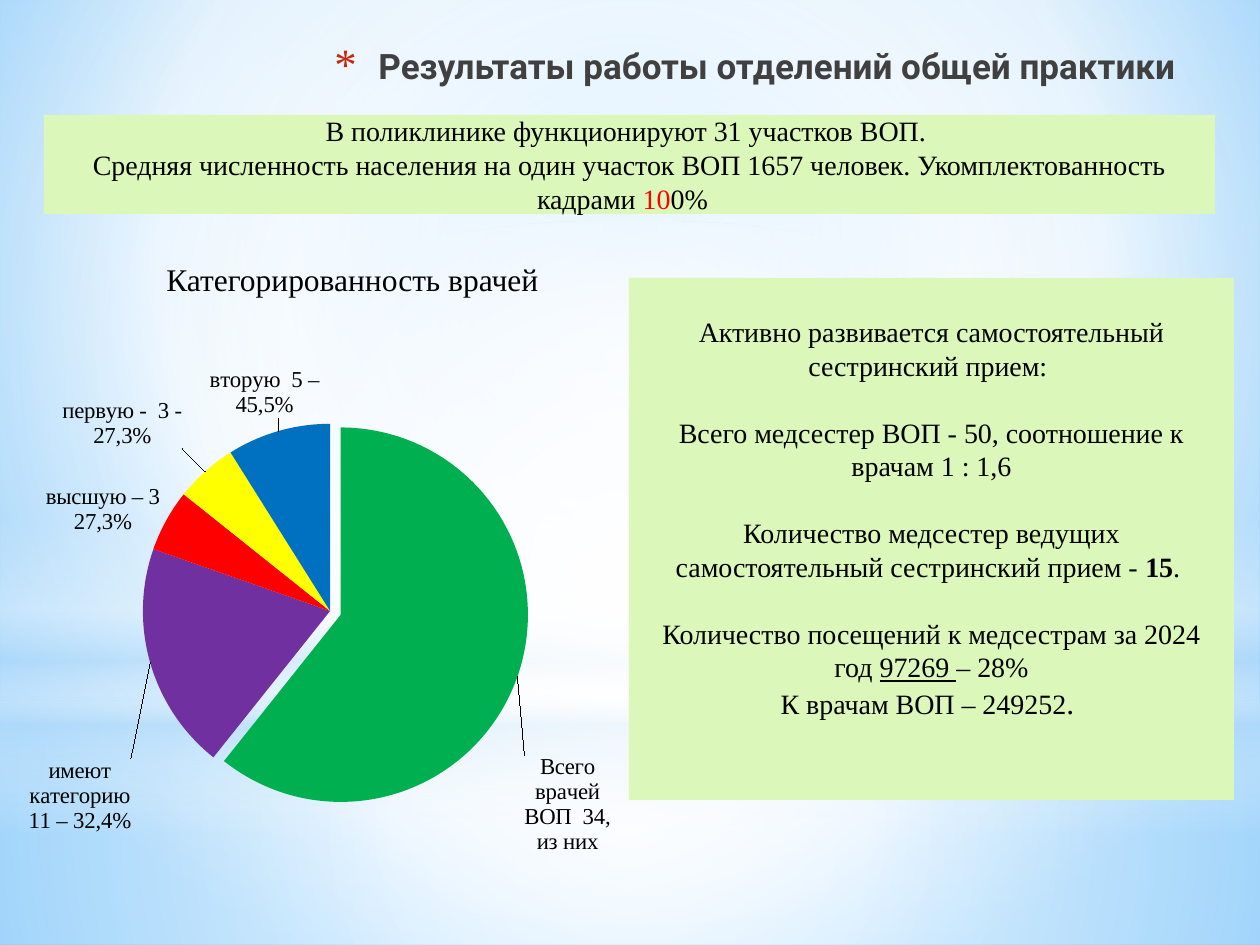
import pptx
import pptx.util
import pptx.dml.color
import pptx.chart.data
import pptx.enum.chart
import pptx.enum.shapes
import pptx.enum.text
import pptx.oxml
import pptx.oxml.ns

PX = 914400 / 126
SERIF = "Times New Roman"
COLORS = {
    "black": "000000", "title": "404040", "bullet": "C3260C", "box": "DCF7BA",
    "sky": "9ED5FF", "deep": "5BB9FF", "haze": "B4DCFA", "white": "FFFFFF",
    "green": "00B050", "purple": "7030A0", "red": "FF0000", "yellow": "FFFF00", "blue": "0070C0",
}
RGB = {name: pptx.dml.color.RGBColor.from_string(value) for name, value in COLORS.items()}
ALIGN = pptx.enum.text.PP_ALIGN
ANCHOR = pptx.enum.text.MSO_ANCHOR
SHAPE = pptx.enum.shapes.MSO_SHAPE
NS = pptx.oxml.ns.nsdecls("a", "c")


def gradient(stops, center=None):
    stop_xml = "".join(
        f'<a:gs pos="{place * 1000}"><a:srgbClr val="{COLORS[color]}">'
        f'<a:alpha val="{alpha * 1000}"/></a:srgbClr></a:gs>'
        for place, color, alpha in stops)
    if center:
        left, top, right, bottom = [side * 1000 for side in center]
        direction = (f'<a:path path="circle"><a:fillToRect l="{left}" t="{top}" '
                     f'r="{right}" b="{bottom}"/></a:path>')
    else:
        direction = '<a:lin ang="5400000" scaled="0"/>'
    return pptx.oxml.parse_xml(
        f'<a:gradFill {NS} rotWithShape="1"><a:gsLst>{stop_xml}</a:gsLst>{direction}</a:gradFill>')


def add_runs(paragraph, runs, **base):
    for text, changes in runs:
        run = paragraph.add_run()
        run.text = text
        values = {"name": SERIF, "size": 16, "color": "black", **base, **changes}
        run.font.color.rgb = RGB[values.pop("color")]
        values["size"] = pptx.util.Pt(values["size"])
        for name, value in values.items():
            setattr(run.font, name, value)


presentation = pptx.Presentation()
presentation.slide_width = pptx.util.Inches(10)
presentation.slide_height = pptx.util.Inches(7.5)
slide = presentation.slides.add_slide(presentation.slide_layouts[5])

slide.background.fill.solid()
background = slide.background.fill._xPr
background.replace(
    background.find(pptx.oxml.ns.qn("a:solidFill")),
    gradient([(0, "sky", 100), (60, "white", 100), (100, "deep", 100)], (20, 10, 20, 60)))

middle = (50, 50, 50, 50)
backdrops = [
    (SHAPE.RECTANGLE, 703, 242, [(0, "white", 91), (37, "white", 76), (100, "haze", 79)], middle),
    (SHAPE.RECTANGLE, 0, 703, [(0, "white", 89), (48, "white", 62), (100, "haze", 79)], middle),
    (SHAPE.RECTANGLE, 519, 315, [(0, "white", 0), (29, "white", 30), (45, "haze", 40),
                                 (55, "white", 26), (65, "haze", 60), (100, "white", 0)], None),
    (SHAPE.OVAL, 221, 703, [(0, "white", 100), (56, "white", 0)], middle),
]
for index, (kind, top, height, stops, center) in enumerate(backdrops):
    shape = slide.shapes.add_shape(kind, 0, round(top * PX), round(1260 * PX), round(height * PX))
    shape.shadow.inherit = False
    shape.line.fill.background()
    shape.fill.solid()
    properties = shape.element.spPr
    properties.replace(properties.find(pptx.oxml.ns.qn("a:solidFill")), gradient(stops, center))
    slide.shapes.element.insert(2 + index, shape.element)

title = slide.shapes.title
for name, value in {"left": 63, "top": 38, "width": 1134, "height": 77}.items():
    setattr(title, name, round(value * PX))
frame_format = {"word_wrap": True, "auto_size": pptx.enum.text.MSO_AUTO_SIZE.NONE,
                "vertical_anchor": ANCHOR.TOP}
for name, value in frame_format.items():
    setattr(title.text_frame, name, value)
paragraph = title.text_frame.paragraphs[0]
paragraph.alignment = ALIGN.RIGHT
add_runs(paragraph, [("Результаты работы отделений общей практики ", {})],
         name="Roboto", size=20, color="title", bold=True)
paragraph_properties = paragraph._p.get_or_add_pPr()
paragraph_properties.set("marL", "320040")
paragraph_properties.set("indent", "-320040")
for xml in (f'<a:buClr {NS}><a:srgbClr val="{COLORS["bullet"]}"/></a:buClr>',
            f'<a:buSzPct {NS} val="128000"/>', f'<a:buFont {NS} typeface="{SERIF}"/>',
            f'<a:buChar {NS} char="*"/>'):
    paragraph_properties.append(pptx.oxml.parse_xml(xml))

boxes = [
    ((44, 115, 1171, 99), ANCHOR.MIDDLE, 6, [
        (0, [("В поликлинике функционируют 31 участков ВОП. ", {})]),
        (0, [("Средняя численность населения на один участок ВОП 1657 человек. "
              "Укомплектованность кадрами ", {}), ("10", {"color": "red"}), ("0%  ", {})]),
    ]),
    ((629, 278, 605, 522), ANCHOR.TOP, 37, [
        (0, [("Активно развивается самостоятельный сестринский прием: ", {})]),
        (19, [("Всего медсестер ВОП - 50, соотношение к врачам 1 : 1,6", {})]),
        (19, [("Количество медсестер ведущих самостоятельный сестринский прием - ", {}),
              ("15", {"bold": True}), (". ", {})]),
        (19, [("Количество посещений к медсестрам за 2024 год ", {}),
              ("97269 ", {"underline": True}), ("– 28%", {})]),
        (0, [("К врачам ВОП – 249252", {}), (". ", {"size": 18})]),
    ]),
]
for place, anchor, margin, paragraphs in boxes:
    shape = slide.shapes.add_shape(SHAPE.RECTANGLE, *[round(value * PX) for value in place])
    shape.shadow.inherit = False
    shape.fill.solid()
    shape.fill.fore_color.rgb = RGB["box"]
    shape.line.fill.background()
    frame = shape.text_frame
    for name, value in {"word_wrap": True, "vertical_anchor": anchor,
                        "margin_top": round(margin * PX)}.items():
        setattr(frame, name, value)
    for index, (space, runs) in enumerate(paragraphs):
        paragraph = frame.add_paragraph() if index else frame.paragraphs[0]
        paragraph.alignment = ALIGN.CENTER
        paragraph.space_before = pptx.util.Pt(space)
        add_runs(paragraph, runs)

slices = [
    ("Всего врачей, из них  ", 34, "green", "Всего врачей ВОП  34, из них", (0, 0.13)),
    ("имеют категорию ", 11, "purple", "имеют категорию 11 – 32,4%", (-0.02, 0.16)),
    ("высшую ", 3, "red", "высшую – 3 27,3%", (0, 0.03)),
    ("первую ", 3, "yellow", "первую -  3 - 27,3%", (-0.03, -0.03)),
    ("вторую ", 5, "blue", "вторую  5 – 45,5%", (0.07, -0.01)),
]
chart_data = pptx.chart.data.CategoryChartData()
chart_data.categories = [row[0] for row in slices]
chart_data.add_series("Series 1", [row[1] for row in slices])
chart = slide.shapes.add_chart(
    pptx.enum.chart.XL_CHART_TYPE.PIE,
    *[round(value * PX) for value in (14, 324, 614, 586)], chart_data).chart
chart.has_title = False
chart.has_legend = False
for name, value in {"name": "Roboto", "size": pptx.util.Pt(10)}.items():
    setattr(chart.font, name, value)
chart.font.color.rgb = RGB["black"]
chart.plots[0].vary_by_categories = True
series = chart.plots[0].series[0]
labels = series.data_labels
for name, value in {"show_value": True, "show_category_name": True,
                    "position": pptx.enum.chart.XL_LABEL_POSITION.OUTSIDE_END}.items():
    setattr(labels, name, value)
for index, (category, value, color, text, offset) in enumerate(slices):
    point = series.points[index]
    point.format.fill.solid()
    point.format.fill.fore_color.rgb = RGB[color]
    add_runs(point.data_label.text_frame.paragraphs[0], [(text, {})], size=13, bold=False)
    point.data_label.position = pptx.enum.chart.XL_LABEL_POSITION.OUTSIDE_END
    label = chart.element.xpath(f'.//c:dLbl[c:idx/@val="{index}"]')[0]
    label.insert(1, pptx.oxml.parse_xml(
        f'<c:layout {NS}><c:manualLayout><c:x val="{offset[0]}"/><c:y val="{offset[1]}"/>'
        '</c:manualLayout></c:layout>'))
first_point = chart.element.xpath('.//c:dPt[c:idx/@val="0"]')[0]
first_point.find(pptx.oxml.ns.qn("c:spPr")).addprevious(
    pptx.oxml.parse_xml(f'<c:explosion {NS} val="6"/>'))

plot_area = chart.element.xpath(".//c:plotArea")[0]
for layout in plot_area.xpath("./c:layout"):
    plot_area.remove(layout)
plot_area.insert(0, pptx.oxml.parse_xml(
    f'<c:layout {NS}><c:manualLayout><c:layoutTarget val="inner"/>'
    '<c:xMode val="edge"/><c:yMode val="edge"/><c:x val="0.21"/><c:y val="0.17"/>'
    '<c:w val="0.61"/><c:h val="0.64"/></c:manualLayout></c:layout>'))

caption = slide.shapes.add_textbox(*[round(value * PX) for value in (154, 254, 413, 50)])
caption.text_frame.word_wrap = False
add_runs(caption.text_frame.paragraphs[0], [("Категорированность врачей", {})], size=18)

presentation.save("out.pptx")
